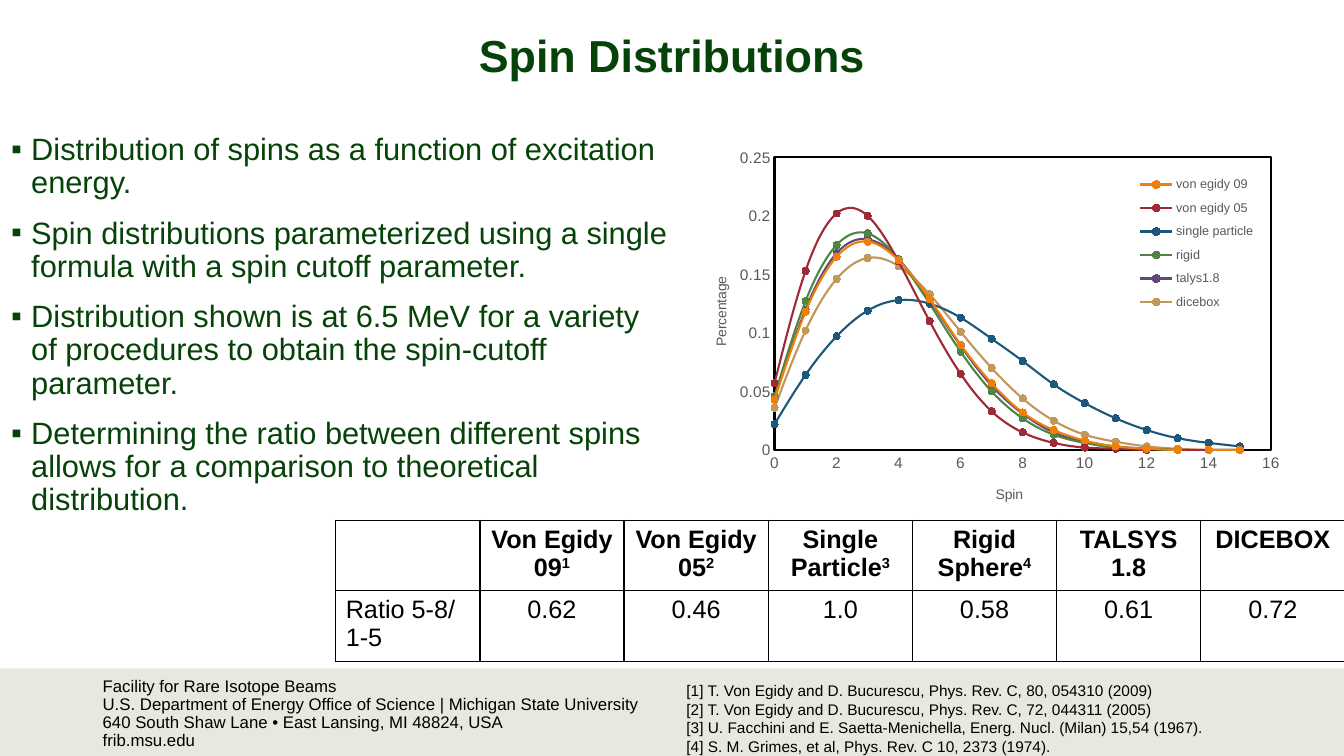
from dataclasses import dataclass

from lxml import etree
from pptx import Presentation
from pptx import util as u
from pptx.chart.data import XyChartData
from pptx.dml.color import RGBColor
from pptx.enum import chart as charts, shapes, text
from pptx.oxml.ns import qn

PX_PER_INCH = 100
EMU_PER_PX = 914400 // PX_PER_INCH
FONT = "Arial"
COLORS = {
    "green": "064308",
    "black": "000000",
    "gray": "595959",
    "band": "E7E9DE",
    "orange": "F07F09",
    "red": "9F2936",
    "blue": "1B587C",
    "leaf": "4E8542",
    "purple": "604878",
    "tan": "C19859",
}


@dataclass
class Box:
    left: int
    top: int
    width: int
    height: int

    def emu(self) -> list[int]:
        return [px(v) for v in (self.left, self.top, self.width, self.height)]


@dataclass
class Curve:
    name: str
    color: str
    values: list[float]


@dataclass
class Column:
    heading: str
    note: str
    ratio: str


BULLETS = [
    "Distribution of spins as a function of excitation energy.",
    "Spin distributions parameterized using a single formula with a spin cutoff parameter.",
    "Distribution shown is at 6.5 MeV for a variety of procedures to obtain the spin-cutoff parameter.",
    "Determining the ratio between different spins allows for a comparison to theoretical distribution.",
]
ADDRESS = [
    "Facility for Rare Isotope Beams",
    "U.S. Department of Energy Office of Science | Michigan State University",
    "640 South Shaw Lane • East Lansing, MI 48824, USA",
    "frib.msu.edu",
]
REFERENCES = [
    "[1] T. Von Egidy and D. Bucurescu, Phys. Rev. C, 80, 054310 (2009)",
    "[2] T. Von Egidy and D. Bucurescu, Phys. Rev. C, 72, 044311 (2005)",
    "[3] U. Facchini and E. Saetta-Menichella, Energ. Nucl. (Milan) 15,54 (1967).",
    "[4] S. M. Grimes, et al, Phys. Rev. C 10, 2373 (1974).",
]
CURVES = [
    Curve("von egidy 09", "orange", [0.043, 0.118, 0.165, 0.178, 0.162, 0.129, 0.09, 0.057,
                                     0.032, 0.017, 0.008, 0.003, 0.001, 0, 0, 0]),
    Curve("von egidy 05", "red", [0.057, 0.153, 0.202, 0.2, 0.161, 0.11, 0.065, 0.033,
                                  0.015, 0.006, 0.002, 0.001, 0, 0, 0, 0]),
    Curve("single particle", "blue", [0.022, 0.064, 0.097, 0.119, 0.128, 0.125, 0.113, 0.095,
                                      0.076, 0.056, 0.04, 0.027, 0.017, 0.01, 0.006, 0.003]),
    Curve("rigid", "leaf", [0.046, 0.127, 0.175, 0.185, 0.163, 0.125, 0.084, 0.05,
                            0.027, 0.013, 0.006, 0.002, 0.001, 0, 0, 0]),
    Curve("talys1.8", "purple", [0.044, 0.12, 0.168, 0.18, 0.163, 0.128, 0.089, 0.055,
                                 0.031, 0.015, 0.007, 0.003, 0.001, 0, 0, 0]),
    Curve("dicebox", "tan", [0.036, 0.102, 0.146, 0.164, 0.157, 0.133, 0.101, 0.07,
                             0.044, 0.025, 0.013, 0.007, 0.003, 0.001, 0, 0]),
]
COLUMNS = [
    Column("", "", "Ratio 5-8/ 1-5"),
    Column("Von Egidy 09", "1", "0.62"),
    Column("Von Egidy 05", "2", "0.46"),
    Column("Single Particle", "3", "1.0"),
    Column("Rigid Sphere", "4", "0.58"),
    Column("TALSYS 1.8", "", "0.61"),
    Column("DICEBOX", "", "0.72"),
]


def px(length: int) -> int:
    return length * EMU_PER_PX


def rgb(color: str) -> RGBColor:
    return RGBColor.from_string(COLORS[color])


def style_font(font, size: float, color: str, bold: bool = False) -> None:
    font.name, font.size, font.bold = FONT, u.Pt(size), bold
    font.color.rgb = rgb(color)


def fill_text(frame, lines: list[str], size: float, color: str, bold: bool = False) -> None:
    frame.word_wrap = True
    frame.text = "\n".join(lines)
    for paragraph in frame.paragraphs:
        for run in paragraph.runs:
            style_font(run.font, size, color, bold)


def place(shape, box: Box) -> None:
    shape.left, shape.top, shape.width, shape.height = box.emu()


def set_margins(frame, side: int, end: int) -> None:
    frame.margin_left = frame.margin_right = px(side)
    frame.margin_top = frame.margin_bottom = px(end)
    frame.auto_size = text.MSO_AUTO_SIZE.NONE


def add_title(slide) -> None:
    title = slide.shapes.title
    place(title, Box(11, 32, 1311, 52))
    frame = title.text_frame
    set_margins(frame, 6, 2)
    frame.vertical_anchor = text.MSO_ANCHOR.MIDDLE
    fill_text(frame, ["Spin Distributions"], 32, "green", True)
    frame.paragraphs[0].alignment = text.PP_ALIGN.CENTER
    frame.paragraphs[0].line_spacing = 0.88


def add_bullets(slide) -> None:
    body = slide.placeholders[1]
    place(body, Box(11, 133, 656, 502))
    frame = body.text_frame
    set_margins(frame, 0, 0)
    fill_text(frame, BULLETS, 22, "green")
    for index, paragraph in enumerate(frame.paragraphs):
        properties = paragraph._p.get_or_add_pPr()
        properties.set("marL", str(px(20)))
        properties.set("indent", str(px(-20)))
        etree.SubElement(properties, qn("a:buFont"), typeface=FONT)
        etree.SubElement(properties, qn("a:buChar"), char="▪")
        paragraph.line_spacing = 0.9
        paragraph.space_before = u.Pt(12.1 if index else 0)


def add_footer(slide) -> None:
    band = slide.shapes.add_shape(shapes.MSO_SHAPE.RECTANGLE, *Box(0, 663, 1333, 87).emu())
    band.shadow.inherit = False
    band.fill.solid()
    band.fill.fore_color.rgb = rgb("band")
    band.line.fill.background()
    address = slide.shapes.add_textbox(*Box(92, 667, 600, 83).emu())
    fill_text(address.text_frame, ADDRESS, 12, "black")
    for paragraph in address.text_frame.paragraphs:
        paragraph.line_spacing = u.Pt(13)
    references = slide.shapes.add_textbox(*Box(671, 671, 538, 79).emu())
    fill_text(references.text_frame, REFERENCES, 11, "black")


def set_layout(element, index: int, **settings: object) -> None:
    for old in element.findall(qn("c:layout")):
        element.remove(old)
    layout = etree.Element(qn("c:layout"))
    manual = etree.SubElement(layout, qn("c:manualLayout"))
    for name, value in settings.items():
        etree.SubElement(manual, qn(f"c:{name}"), val=str(value))
    element.insert(index, layout)


def style_axis(axis, title: str, maximum: float, step: float, x: float, y: float) -> None:
    axis.minimum_scale, axis.maximum_scale, axis.major_unit = 0, maximum, step
    axis.has_major_gridlines = False
    axis.major_tick_mark = axis.minor_tick_mark = charts.XL_TICK_MARK.NONE
    axis.tick_labels.number_format = "General"
    axis.tick_labels.number_format_is_linked = False
    style_font(axis.tick_labels.font, 11, "gray")
    axis.format.line.color.rgb = rgb("black")
    axis.format.line.width = u.Pt(1.5)
    axis.axis_title.text_frame.text = title
    style_font(axis.axis_title.text_frame.paragraphs[0].runs[0].font, 10, "gray")
    set_layout(axis.axis_title._element, 1, xMode="edge", yMode="edge", x=x, y=y)


def add_spin_chart(slide) -> None:
    data = XyChartData()
    for curve in CURVES:
        series = data.add_series(curve.name)
        for spin, value in enumerate(curve.values):
            series.add_data_point(spin, value)
    kind = charts.XL_CHART_TYPE.XY_SCATTER_SMOOTH
    chart = slide.shapes.add_chart(kind, *Box(692, 138, 586, 365).emu(), data).chart
    chart.has_title = False
    style_font(chart.font, 10, "black")
    chart.plots[0].vary_by_categories = False
    style_axis(chart.category_axis, "Spin", 16, 2, 0.5, 0.94)
    style_axis(chart.value_axis, "Percentage", 0.25, 0.05, 0.02, 0.37)
    rotation = chart.value_axis.axis_title._element.find(f".//{qn('a:bodyPr')}")
    rotation.set("rot", "-5400000")
    rotation.set("vert", "horz")
    for series, curve in zip(chart.plots[0].series, CURVES):
        series._element.find(qn("c:smooth")).set("val", "1")
        series.format.line.color.rgb = rgb(curve.color)
        series.format.line.width = u.Pt(1.5)
        series.marker.style, series.marker.size = charts.XL_MARKER_STYLE.CIRCLE, 5
        series.marker.format.fill.solid()
        series.marker.format.fill.fore_color.rgb = rgb(curve.color)
        series.marker.format.line.color.rgb = rgb(curve.color)
    chart.has_legend = True
    chart.legend.position = charts.XL_LEGEND_POSITION.RIGHT
    chart.legend.include_in_layout = False
    style_font(chart.legend.font, 9, "gray")
    set_layout(chart.legend._element, 1, xMode="edge", yMode="edge", x=0.73, y=0.08, w=0.23, h=0.41)
    area = chart._chartSpace.chart.plotArea
    set_layout(area, 0, layoutTarget="inner", xMode="edge", yMode="edge", x=0.13, y=0.05, w=0.84, h=0.8)
    add_line(etree.SubElement(area, qn("c:spPr")), "a:ln", 1.5)


def add_line(parent, tag: str, width: float) -> None:
    line = etree.SubElement(parent, qn(tag), w=str(u.Pt(width)))
    fill = etree.SubElement(line, qn("a:solidFill"))
    etree.SubElement(fill, qn("a:srgbClr"), val=COLORS["black"])


def fill_cell(cell, words: str, note: str, bold: bool, centred: bool) -> None:
    for side in "LRTB":
        add_line(cell._tc.get_or_add_tcPr(), f"a:ln{side}", 1)
    cell.fill.background()
    fill_text(cell.text_frame, [words], 18, "black", bold)
    paragraph = cell.text_frame.paragraphs[0]
    if centred:
        paragraph.alignment = text.PP_ALIGN.CENTER
    if note:
        run = paragraph.add_run()
        run.text = note
        style_font(run.font, 18, "black", bold)
        run._r.get_or_add_rPr().set("baseline", "30000")


def add_ratio_table(slide) -> None:
    box = Box(333, 516, 143 * len(COLUMNS), 132)
    table = slide.shapes.add_table(2, len(COLUMNS), *box.emu()).table
    table.horz_banding = False
    for index, column in enumerate(COLUMNS):
        fill_cell(table.cell(0, index), column.heading, column.note, True, True)
        fill_cell(table.cell(1, index), column.ratio, "", False, index > 0)


def main() -> None:
    presentation = Presentation()
    presentation.slide_width, presentation.slide_height = px(1333), px(750)
    slide = presentation.slides.add_slide(presentation.slide_layouts[1])
    add_footer(slide)
    add_bullets(slide)
    add_title(slide)
    add_spin_chart(slide)
    add_ratio_table(slide)
    presentation.save("out.pptx")


if __name__ == "__main__":
    main()
